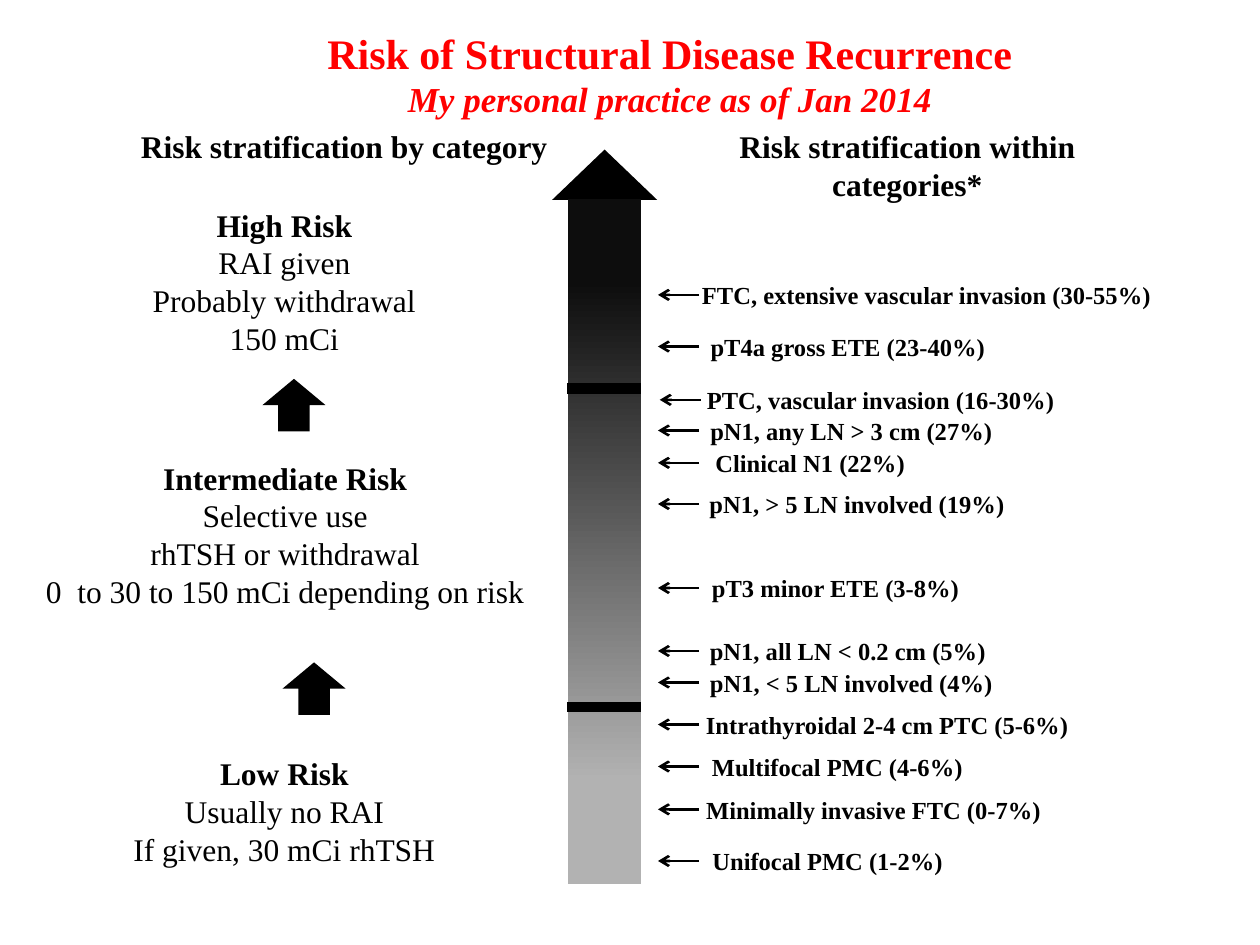
from dataclasses import dataclass

from lxml import etree
from pptx import Presentation
from pptx import util as u
from pptx.dml import color
from pptx.enum import shapes, text
from pptx.oxml import ns

FONT = "Times New Roman"
HEX = {"ink": "000000", "title": "FF0000", "dark": "0D0D0D", "light": "B2B2B2"}
MID = text.PP_ALIGN.CENTER
LEFT = text.PP_ALIGN.LEFT


@dataclass
class Line:
    words: str
    size: float = 18
    bold: bool = False
    slant: bool = False
    tint: str = "ink"
    align: text.PP_ALIGN = MID


@dataclass
class Box:
    x: float
    y: float
    w: float
    h: float
    lines: list[Line]
    wrap: bool = True


@dataclass
class Factor:
    words: str
    x: float
    y: float
    w: float
    shift: float = 0


@dataclass
class Arrow:
    x: float
    y: float
    w: float
    h: float


def rgb(name: str) -> color.RGBColor:
    return color.RGBColor.from_string(HEX[name])


def block(head: str, *rest: str) -> list[Line]:
    return [Line(head, bold=True)] + [Line(words) for words in rest]


def write(slide, box: Box) -> None:
    frame = slide.shapes.add_textbox(
        u.Pt(box.x), u.Pt(box.y), u.Pt(box.w), u.Pt(box.h)
    ).text_frame
    frame.word_wrap = box.wrap
    frame.auto_size = text.MSO_AUTO_SIZE.SHAPE_TO_FIT_TEXT
    frame.text = "\n".join(line.words for line in box.lines)
    for para, line in zip(frame.paragraphs, box.lines):
        para.alignment = line.align
        font = para.runs[0].font
        font.name = FONT
        font.size = u.Pt(line.size)
        font.bold = line.bold
        font.italic = line.slant
        font.color.rgb = rgb(line.tint)


def rule(slide, x: float, y: float, end: float, width: float, head: bool = False) -> None:
    line = slide.shapes.add_connector(
        shapes.MSO_CONNECTOR.STRAIGHT, u.Pt(x), u.Pt(y), u.Pt(end), u.Pt(y)
    )
    line.line.color.rgb = rgb("ink")
    line.line.width = u.Pt(width)
    if head:
        tip = etree.SubElement(line.line._get_or_add_ln(), ns.qn("a:tailEnd"))
        tip.set("type", "arrow")
    etree.SubElement(line._element.spPr, ns.qn("a:effectLst"))


def solid(slide, kind: shapes.MSO_SHAPE, at: Arrow):
    shape = slide.shapes.add_shape(kind, u.Pt(at.x), u.Pt(at.y), u.Pt(at.w), u.Pt(at.h))
    shape.shadow.inherit = False
    shape.fill.solid()
    shape.fill.fore_color.rgb = rgb("ink")
    shape.line.fill.background()
    return shape


def scale(slide) -> None:
    solid(slide, shapes.MSO_SHAPE.UP_ARROW, Arrow(315.5, 85.5, 60, 57.5))
    bar = solid(slide, shapes.MSO_SHAPE.RECTANGLE, Arrow(324.5, 113.5, 42, 391.5))
    bar.fill.gradient()
    bar.fill.gradient_angle = 270
    for stop, (spot, tint) in zip(bar.fill.gradient_stops, ((0.12, "dark"), (0.85, "light"))):
        stop.position = spot
        stop.color.rgb = rgb(tint)
    for y in (222, 404):
        rule(slide, 324, y, 366.5, 6)


def mark(slide, item: Factor) -> None:
    rule(slide, 399.5 + item.shift, item.y, 376 + item.shift, 1.5, head=True)
    line = Line(item.words, size=14, bold=True)
    write(slide, Box(item.x, item.y - 12, item.w, 24.5, [line], wrap=False))


BOXES = [
    Box(180, 12, 410, 60.5, [
        Line("Risk of Structural Disease Recurrence", 24, True, tint="title", align=LEFT),
        Line("My personal practice as of Jan 2014", 20, True, True, "title"),
    ], wrap=False),
    Box(61, 69, 271.5, 29, block("Risk stratification by category")),
    Box(384, 69, 269, 51, block("Risk stratification within categories*")),
    Box(26.5, 114, 272, 94.5,
        block("High Risk", "RAI given", "Probably withdrawal", "150 mCi")),
    Box(13.5, 258.5, 299, 94.5,
        block("Intermediate Risk", "Selective use", "rhTSH or withdrawal",
              "0  to 30 to 150 mCi depending on risk")),
    Box(53, 427.5, 219, 72.5,
        block("Low Risk", "Usually no RAI", "If given, 30 mCi rhTSH")),
]

STEPS = [Arrow(150, 216.5, 36, 30), Arrow(161.5, 378.5, 36, 30)]

FACTORS = [
    Factor("FTC, extensive vascular invasion (30-55%)", 393, 168.5, 273),
    Factor("pT4a gross ETE (23-40%)", 398, 198, 173),
    Factor("PTC, vascular invasion (16-30%)", 396, 228.5, 214.5, 1),
    Factor("pN1, any LN > 3 cm (27%)", 398, 246, 177),
    Factor("Clinical N1 (22%)", 401, 264.5, 124),
    Factor("pN1, > 5 LN involved (19%)", 397.5, 288, 184.5),
    Factor("pT3 minor ETE (3-8%)", 399, 336, 157),
    Factor("pN1, all LN < 0.2 cm (5%)", 398, 372, 173),
    Factor("pN1, < 5 LN involved (4%)", 398, 390, 177),
    Factor("Intrathyroidal 2-4 cm PTC (5-6%)", 395.5, 414, 223),
    Factor("Multifocal PMC (4-6%)", 399, 438, 159),
    Factor("Minimally invasive FTC (0-7%)", 395.5, 462.5, 207.5),
    Factor("Unifocal PMC (1-2%)", 399.5, 492, 147),
]


def main() -> None:
    deck = Presentation()
    deck.slide_width, deck.slide_height = u.Pt(720), u.Pt(540)
    slide = deck.slides.add_slide(deck.slide_layouts[6])
    scale(slide)
    for box in BOXES:
        write(slide, box)
    for step in STEPS:
        solid(slide, shapes.MSO_SHAPE.UP_ARROW, step)
    for item in FACTORS:
        mark(slide, item)
    deck.save("out.pptx")


if __name__ == "__main__":
    main()
